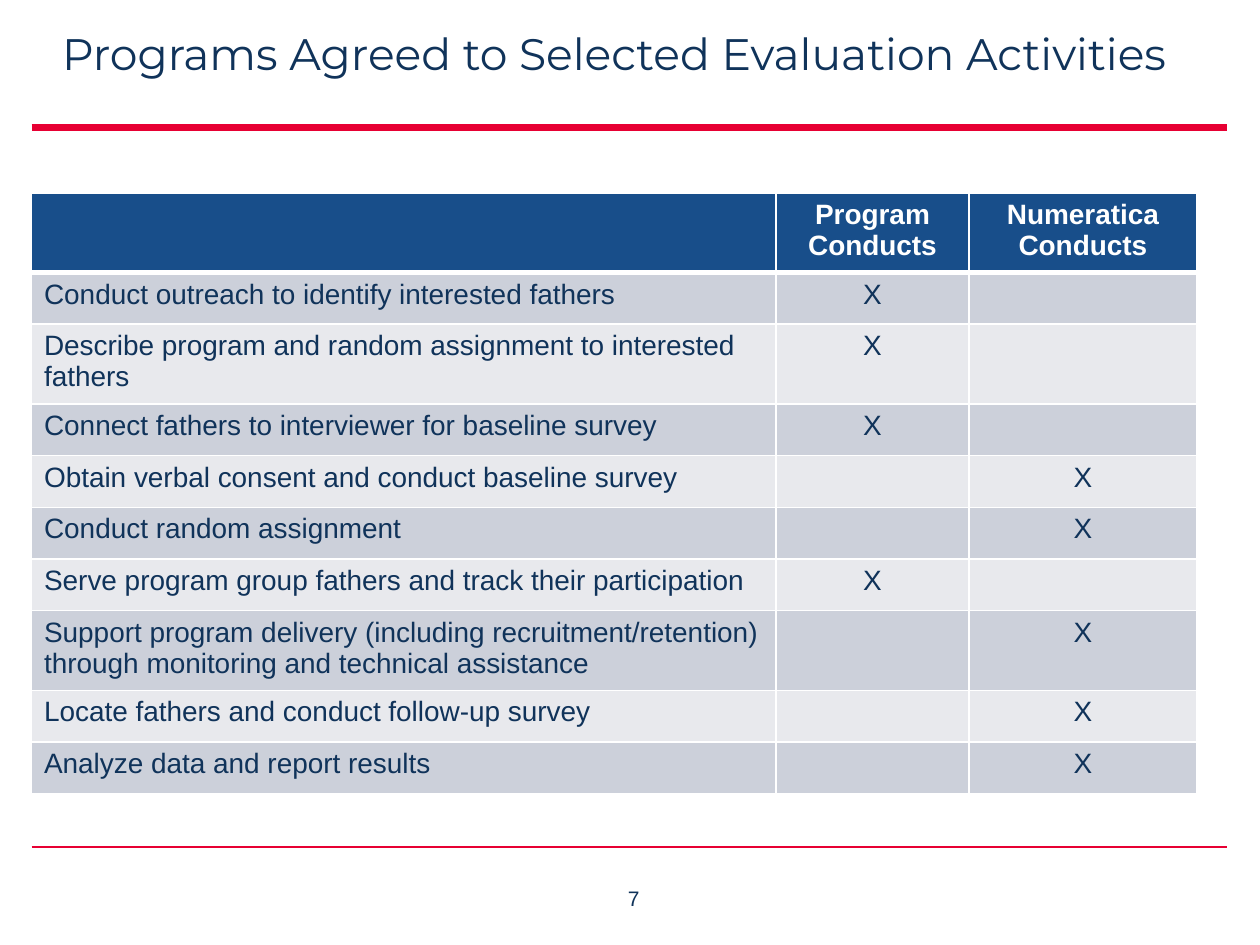
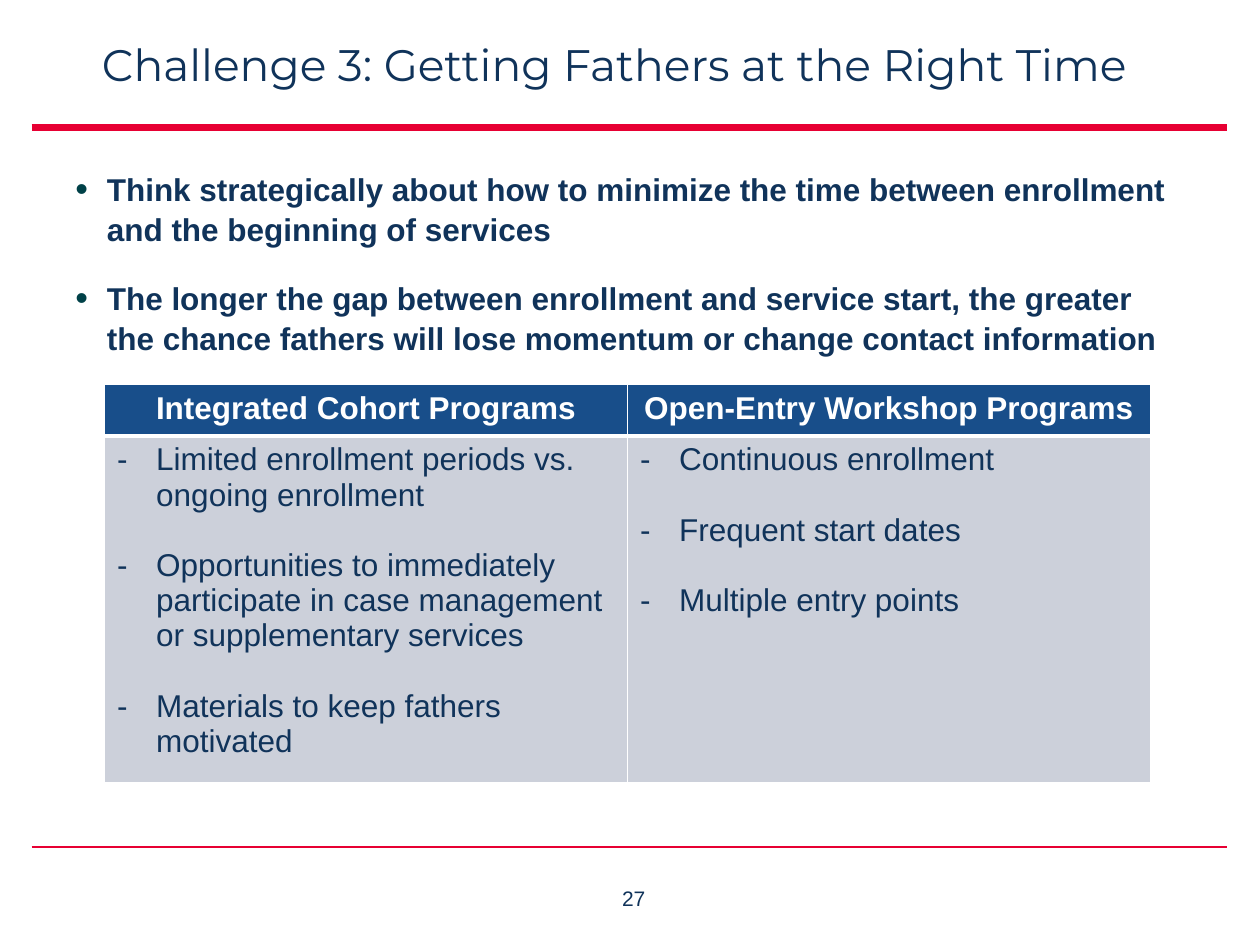
import collections

import lxml.etree
import pptx
import pptx.dml.color
import pptx.enum.shapes
import pptx.enum.text
import pptx.oxml.ns
import pptx.util

COLOURS = {
    "navy": "10335A",
    "red": "E70033",
    "header": "184E8A",
    "dark band": "CCD0DA",
    "light band": "E8E9ED",
    "bullet": "004148",
    "white": "FFFFFF",
}
GRID = 0.25
COLUMNS, ROWS = 40, 30
Box = collections.namedtuple("Box", "left top width height")
TITLE = Box(1, 0.84, 37, 2.84)
RULES = Box(1, 4.04, 37.96, 22.86)
NUMBER = Box(18.12, 27.92, 4, 1.5)
ACTIVITIES = Box(1, 6.12, 37, 18.48)
ADVICE = Box(2, 5.12, 36, 6.8)
COMPARISON = Box(3.32, 12.2, 33.2, 12.08)
SINGLE_ROW, DOUBLE_ROW = 1.64, 2.36
CENTRE = pptx.enum.text.PP_ALIGN.CENTER


def grid(cells):
    """Turn a count of grid cells into a length."""
    return pptx.util.Inches(round(cells * GRID, 2))


def place(box):
    """Turn a grid box into left, top, width and height."""
    return [grid(side) for side in box]


def colour(name):
    """Look up a named colour."""
    return pptx.dml.color.RGBColor.from_string(COLOURS[name])


def add_element(parent, tag, **attributes):
    """Append a drawing element with the given attributes."""
    element = lxml.etree.SubElement(parent, pptx.oxml.ns.qn(tag))
    for key, value in attributes.items():
        element.set(key, str(value))
    return element


def add_bullet(para, mark, indent, tint=None, percent=100):
    """Give a paragraph a bullet mark and a hanging indent."""
    properties = para._p.get_or_add_pPr()
    hang = int(pptx.util.Inches(indent))
    properties.set("marL", str(hang))
    properties.set("indent", str(-hang))
    if tint:
        add_element(add_element(properties, "a:buClr"), "a:srgbClr", val=COLOURS[tint])
    add_element(properties, "a:buSzPct", val=percent * 1000)
    add_element(properties, "a:buFont", typeface="Arial")
    add_element(properties, "a:buChar", char=mark)


def write(frame, texts, size=16, font="Arial", tint="navy", bold=False,
          align=None, bullet=None, before=0, after=0, spacing=None):
    """Write one formatted paragraph for each text."""
    for index, text in enumerate(texts):
        para = frame.add_paragraph() if index else frame.paragraphs[0]
        if bullet:
            add_bullet(para, **bullet)
        para.alignment = align
        para.line_spacing = spacing
        para.space_before = pptx.util.Pt(before if index else 0)
        para.space_after = pptx.util.Pt(after)
        span = para.add_run()
        span.text = text
        span.font.name = font
        span.font.size = pptx.util.Pt(size)
        span.font.bold = bold
        span.font.color.rgb = colour(tint)


def add_text(page, box, texts, margin=None, wrap=True, **style):
    """Add a text box that fills a grid box."""
    frame = page.shapes.add_textbox(*place(box)).text_frame
    frame.word_wrap = wrap
    if margin is not None:
        frame.margin_left = frame.margin_right = margin
        frame.margin_top = frame.margin_bottom = margin
    write(frame, texts, **style)


def add_rule(page, box, row, weight):
    """Draw a red rule across a box at a row counted from its top."""
    start, height = grid(box.left), grid(box.top + row)
    rule = page.shapes.add_connector(
        pptx.enum.shapes.MSO_CONNECTOR.STRAIGHT,
        start, height, grid(box.left + box.width), height)
    rule.line.color.rgb = colour("red")
    rule.line.width = pptx.util.Pt(weight)
    add_element(rule._element.spPr, "a:effectLst")


def add_page(deck, title, number, title_box):
    """Add a page with its title, two rules and number."""
    page = deck.slides.add_slide(deck.slide_layouts[6])
    add_rule(page, RULES, 0, 4)
    add_rule(page, RULES, RULES.height, 1)
    add_text(page, title_box, [title], margin=0, size=25.2,
             font="Montserrat", align=CENTRE)
    add_text(page, NUMBER, [str(number)], wrap=False, size=12, align=CENTRE)
    return page


def style_cell(cell, fill, **borders):
    """Fill a cell and draw white borders of the given weights."""
    properties = cell._tc.get_or_add_tcPr()
    for side, weight in borders.items():
        line = add_element(properties, f"a:ln{side}", w=int(pptx.util.Pt(weight)))
        add_element(add_element(line, "a:solidFill"), "a:srgbClr", val=COLOURS["white"])
    cell.fill.solid()
    cell.fill.fore_color.rgb = colour(fill)


def add_banded_table(page, box, headings, widths, heights, size):
    """Add a table with a blue heading row and alternating grey rows."""
    table = page.shapes.add_table(len(heights), len(widths), *place(box)).table
    table.horz_banding = False
    for column, width in zip(table.columns, widths):
        column.width = grid(width)
    for index, (row, height) in enumerate(zip(table.rows, heights)):
        row.height = grid(height)
        for cell in row.cells:
            if index == 0:
                style_cell(cell, "header", L=1, R=1, T=1, B=3)
            else:
                style_cell(cell, "dark band" if index % 2 else "light band", L=1, R=1, B=1)
    for cell, heading in zip(table.rows[0].cells, headings):
        if heading:
            write(cell.text_frame, [heading], size=size, tint="white",
                  bold=True, align=CENTRE)
    return table


def add_activities(page, box):
    """Show who conducts each evaluation activity."""
    activities = [
        ("Conduct outreach to identify interested fathers", 1, SINGLE_ROW),
        ("Describe program and random assignment to interested fathers", 1, DOUBLE_ROW),
        ("Connect fathers to interviewer for baseline survey", 1, SINGLE_ROW),
        ("Obtain verbal consent and conduct baseline survey", 2, SINGLE_ROW),
        ("Conduct random assignment", 2, SINGLE_ROW),
        ("Serve program group fathers and track their participation", 1, SINGLE_ROW),
        ("Support program delivery (including recruitment/retention) "
         "through monitoring and technical assistance", 2, DOUBLE_ROW),
        ("Locate fathers and conduct follow-up survey", 2, SINGLE_ROW),
        ("Analyze data and report results", 2, SINGLE_ROW),
    ]
    program, evaluator = 6.12, 7.24
    table = add_banded_table(
        page, box, ["", "Program Conducts", "Numeratica Conducts"],
        [box.width - program - evaluator, program, evaluator],
        [DOUBLE_ROW] + [height for _, _, height in activities], size=16)
    for row, (activity, conductor, _) in enumerate(activities, 1):
        write(table.cell(row, 0).text_frame, [activity])
        write(table.cell(row, conductor).text_frame, ["X"], align=CENTRE)


def add_advice(page, box):
    """List the advice on enrollment timing."""
    add_text(page, box, [
        "Think strategically about how to minimize the time between enrollment "
        "and the beginning of services",
        "The longer the gap between enrollment and service start, the greater "
        "the chance fathers will lose momentum or change contact information",
    ], size=18, bold=True, before=10, after=6, spacing=1.07,
        bullet={"mark": "•", "indent": 0.25, "tint": "bullet", "percent": 115})


def add_comparison(page, box):
    """Compare the two kinds of program side by side."""
    programs = {
        "Integrated Cohort Programs": [
            "Limited enrollment periods vs. ongoing enrollment",
            "Opportunities to immediately participate in case management "
            "or supplementary services",
            "Materials to keep fathers motivated",
        ],
        "Open-Entry Workshop Programs": [
            "Continuous enrollment",
            "Frequent start dates",
            "Multiple entry points",
        ],
    }
    table = add_banded_table(
        page, box, programs, [box.width / len(programs)] * len(programs),
        [SINGLE_ROW, box.height - SINGLE_ROW], size=18)
    for cell, points in zip(table.rows[1].cells, programs.values()):
        write(cell.text_frame, points, size=18, before=20,
              bullet={"mark": "-", "indent": 0.31})


def main():
    """Build the deck and save it."""
    deck = pptx.Presentation()
    deck.slide_width, deck.slide_height = grid(COLUMNS), grid(ROWS)
    page = add_page(deck, "Programs Agreed to Selected Evaluation Activities", 7, TITLE)
    add_activities(page, ACTIVITIES)
    page = add_page(deck, "Challenge 3: Getting Fathers at the Right Time", 27,
                    TITLE._replace(top=1.2))
    add_advice(page, ADVICE)
    add_comparison(page, COMPARISON)
    deck.save("out.pptx")


if __name__ == "__main__":
    main()
